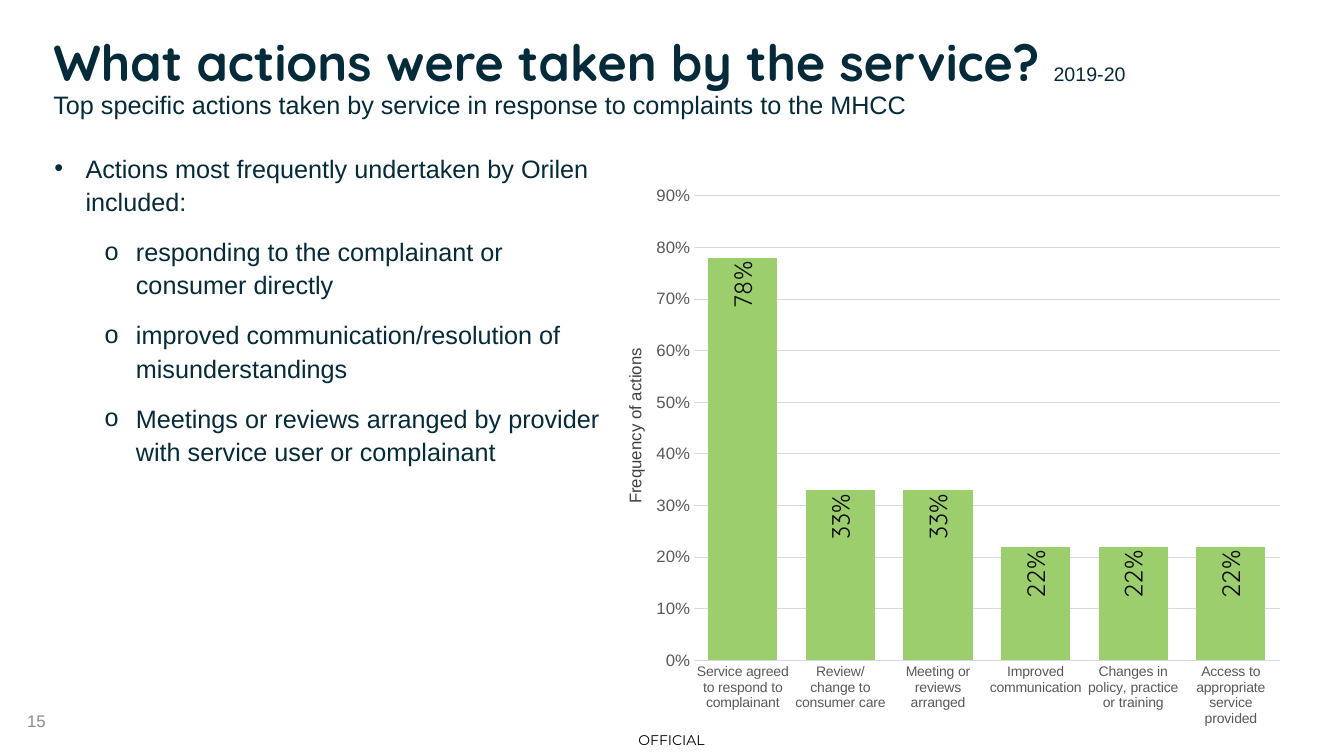
"""Build a slide on the actions a service took, with a bullet list and a column chart."""
from lxml import etree
from pptx import Presentation
from pptx.chart.data import CategoryChartData
from pptx.dml.color import RGBColor
from pptx.enum.chart import XL_CHART_TYPE, XL_LABEL_POSITION, XL_TICK_MARK
from pptx.enum.text import MSO_ANCHOR, PP_ALIGN
from pptx.oxml import parse_xml
from pptx.oxml.ns import nsdecls, qn
from pptx.util import Inches, Pt

COLUMN_CLUSTERED = XL_CHART_TYPE.COLUMN_CLUSTERED
INSIDE_END = XL_LABEL_POSITION.INSIDE_END
NO_TICK = XL_TICK_MARK.NONE
TOP, MIDDLE = MSO_ANCHOR.TOP, MSO_ANCHOR.MIDDLE
LEFT, CENTER = PP_ALIGN.LEFT, PP_ALIGN.CENTER

COLORS = {
    "navy": "052A39", "black": "000000", "label": "0D0D0D", "axis title": "404040",
    "axis": "595959", "number": "8C8C8C", "grid": "D9D9D9", "bar": "9DCE6E",
}

presentation = Presentation()
presentation.slide_width, presentation.slide_height = Inches(13.33), Inches(7.5)
slide = presentation.slides.add_slide(presentation.slide_layouts[6])
column, row = presentation.slide_width / 100, presentation.slide_height / 100


def style_font(font, size, color, name="Arial", bold=False):
    font.size, font.name, font.bold = Pt(size), name, bold
    font.color.rgb = RGBColor.from_string(COLORS[color])


def add_text(place, paragraphs, anchor=TOP, align=LEFT, spacing=1.0):
    left, top, width, height = place
    shape = slide.shapes.add_textbox(
        int(left * column), int(top * row), int(width * column), int(height * row))
    frame = shape.text_frame
    frame.word_wrap, frame.vertical_anchor = True, anchor
    for index, runs in enumerate(paragraphs):
        paragraph = frame.add_paragraph() if index else frame.paragraphs[0]
        paragraph.alignment, paragraph.line_spacing = align, spacing
        for text, *font_style in runs:
            run = paragraph.add_run()
            run.text = text
            style_font(run.font, *font_style)
    return shape


official = add_text((46.14, 95.87, 7.65, 4.13),
                    [[("OFFICIAL", 10, "black", "Montserrat")]], MIDDLE, CENTER)
frame = official.text_frame
frame.margin_left = frame.margin_right = frame.margin_top = frame.margin_bottom = 0
add_text((1.28, 92.67, 22.5, 5.33), [[("15", 12, "number")]], MIDDLE)

actions = [
    "Actions most frequently undertaken by Orilen included:",
    "responding to the complainant or consumer directly",
    "improved communication/resolution of misunderstandings",
    "Meetings or reviews arranged by provider with service user or complainant",
]
action_list = add_text((3.3, 19.2, 42.31, 43.33),
                       [[(action, 18, "navy")] for action in actions], spacing=1.1)
for index, paragraph in enumerate(action_list.text_frame.paragraphs):
    paragraph.level = min(index, 1)
    paragraph.space_before, paragraph.space_after = Pt(6 if index else 0), Pt(6)
    properties = paragraph._p.get_or_add_pPr()
    properties.set("marL", str(Inches(0.81 if index else 0.31)))
    properties.set("indent", str(Inches(-0.31)))
    bullet_color = etree.SubElement(properties, qn("a:buClr"))
    etree.SubElement(bullet_color, qn("a:srgbClr"), val=COLORS["navy"])
    etree.SubElement(properties, qn("a:buFont"), typeface="Arial")
    etree.SubElement(properties, qn("a:buChar"), char="o" if index else "•")

chart_data = CategoryChartData(number_format="0%")
chart_data.categories = [
    "Service agreed to respond to complainant", "Review/change to consumer care",
    "Meeting or reviews arranged", "Improved communication",
    "Changes in policy, practice or training", "Access to appropriate service provided",
]
chart_data.add_series("Series 1", [0.78, 0.33, 0.33, 0.22, 0.22, 0.22])
chart = slide.shapes.add_chart(
    COLUMN_CLUSTERED, int(48.84 * column), int(10.4 * row),
    int(47.86 * column), int(85.73 * row), chart_data).chart
chart.has_legend = chart.has_title = False
style_font(chart.font, 10, "black")

category_axis, value_axis = chart.category_axis, chart.value_axis
for axis, size in ((category_axis, 10), (value_axis, 12)):
    axis.major_tick_mark = axis.minor_tick_mark = NO_TICK
    style_font(axis.tick_labels.font, size, "axis")
value_axis.minimum_scale, value_axis.maximum_scale, value_axis.major_unit = 0, 0.9, 0.1
value_axis.tick_labels.number_format = "0%"
value_axis.tick_labels.number_format_is_linked = False
value_axis.format.line.fill.background()
for line in (category_axis.format.line, value_axis.major_gridlines.format.line):
    line.width = Pt(0.75)
    line.color.rgb = RGBColor.from_string(COLORS["grid"])

plot = chart.plots[0]
plot.gap_width, plot.vary_by_categories = 41, False
series = plot.series[0]
series.format.fill.solid()
series.format.fill.fore_color.rgb = RGBColor.from_string(COLORS["bar"])
labels = series.data_labels
labels.show_value, labels.position = True, INSIDE_END
labels.number_format, labels.number_format_is_linked = "0%", False
style_font(labels.font, 18, "label", "Quicksand")
label_body = labels._element.find(qn("c:txPr")).find(qn("a:bodyPr"))
label_body.set("rot", "-5400000")
label_body.set("vert", "horz")

plot_area = chart._chartSpace.chart.plotArea
for old_layout in plot_area.findall(qn("c:layout")):
    plot_area.remove(old_layout)
layout = parse_xml(f"<c:layout {nsdecls('c')}><c:manualLayout/></c:layout>")
plot_area.insert(0, layout)
for tag, value in (("layoutTarget", "inner"), ("xMode", "edge"), ("yMode", "edge"),
                   ("x", "0.058"), ("y", "0.183"), ("w", "0.911"), ("h", "0.725")):
    etree.SubElement(layout[0], qn(f"c:{tag}"), val=value)

add_text((3.23, 4.4, 93.62, 12.4), [
    [("What actions were taken by the service? ", 36, "navy", "Quicksand", True),
     ("2019-20", 14, "navy")],
    [("Top specific actions taken by service in response to complaints to the MHCC",
      18, "navy")],
], spacing=0.9)
axis_title = add_text((38.41, 53.47, 17.63, 5.73),
                      [[("Frequency of actions", 12, "axis title")]], MIDDLE, CENTER)
axis_title.rotation = 270

presentation.save("out.pptx")
